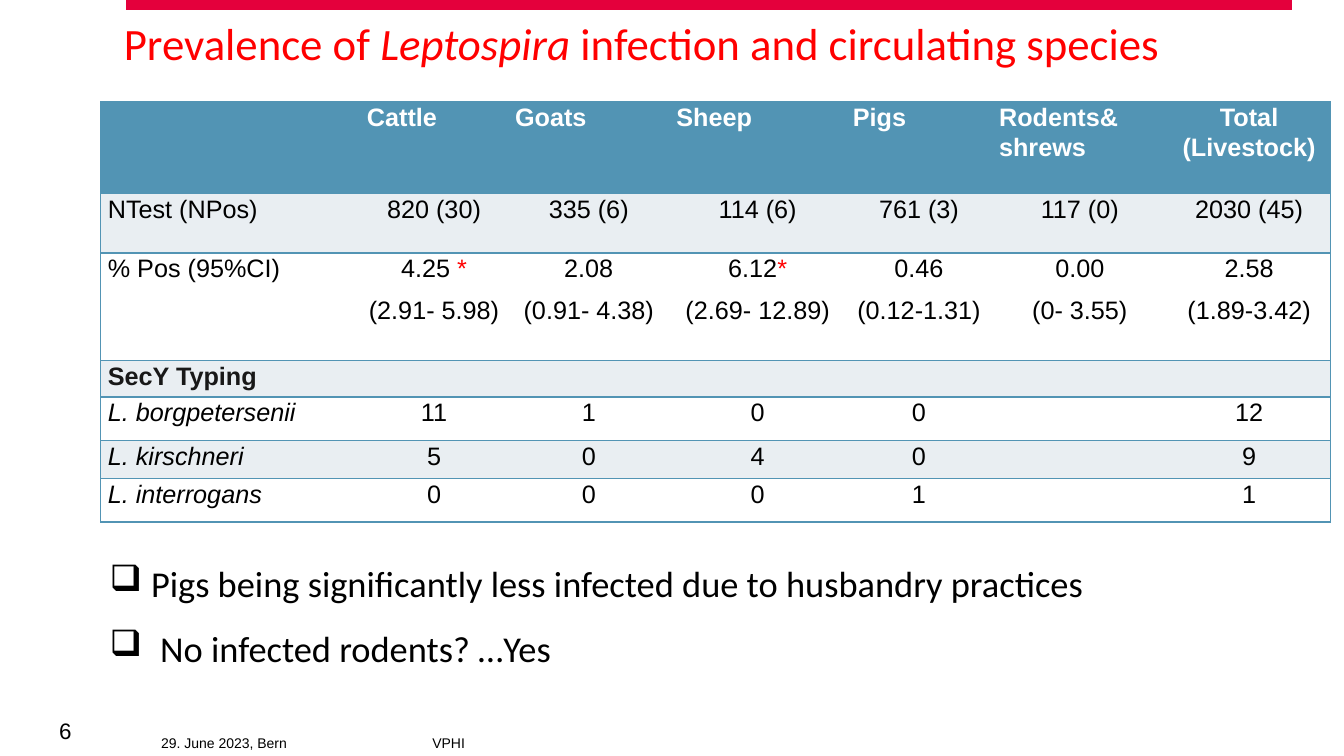
from lxml import etree
from pptx import Presentation
from pptx.dml.color import RGBColor
from pptx.enum.shapes import MSO_CONNECTOR
from pptx.enum.text import MSO_ANCHOR, PP_ALIGN
from pptx.oxml.ns import qn
from pptx.util import Inches, Pt

BLACK = RGBColor(0x00, 0x00, 0x00)
WHITE = RGBColor(0xFF, 0xFF, 0xFF)
RED = RGBColor(0xFF, 0x00, 0x00)
CRIMSON = RGBColor(0xE4, 0x00, 0x3C)
TEAL = RGBColor(0x52, 0x94, 0xB4)
PALE = RGBColor(0xE9, 0xEE, 0xF2)
CHARCOAL = RGBColor(0x18, 0x18, 0x18)

COLUMN_WIDTHS = [2.57, 1.47, 1.6, 1.75, 1.45, 1.74, 1.62]
ROW_HEIGHTS = [0.91, 0.59, 1.07, 0.36, 0.43, 0.38, 0.43]
PREVALENCE = [
    ["", "Cattle", "Goats", "Sheep", "Pigs", "Rodents& shrews", "Total (Livestock)"],
    ["NTest (NPos)", "820 (30)", "335 (6)", "114 (6)", "761 (3)", "117 (0)", "2030 (45)"],
    ["% Pos (95%CI)", "4.25 *\n(2.91- 5.98)", "2.08\n(0.91- 4.38)",
     "6.12*\n(2.69- 12.89)", "0.46\n(0.12-1.31)", "0.00\n(0- 3.55)",
     "2.58\n(1.89-3.42)"],
    ["SecY Typing", "", "", "", "", "", ""],
    ["L. borgpetersenii", "11", "1", "0", "0", "", "12"],
    ["L. kirschneri", "5", "0", "4", "0", "", "9"],
    ["L. interrogans", "0", "0", "0", "1", "", "1"],
]
SECTION_ROW = 3
FINDINGS = [
    ("Pigs being significantly less infected due to husbandry practices", 0.41),
    ("No infected rodents? …Yes", 0.5),
]


class SlideBuilder:
    """Holds the text style and the slide being built."""

    body_face = "Arial"
    display_face = "Calibri"

    def __init__(self, page):
        self.page = page

    def style(self, span, size, face, color, bold=False, italic=False):
        font = span.font
        font.size, font.name = Pt(size), face
        font.bold, font.italic = bold, italic
        font.color.rgb = color

    def rule(self, left, right, top, color, width):
        line = self.page.shapes.add_connector(
            MSO_CONNECTOR.STRAIGHT, Inches(left), Inches(top), Inches(right), Inches(top))
        line.line.color.rgb = color
        line.line.width = Pt(width)
        etree.SubElement(line._element.spPr, qn("a:effectLst"))

    def box(self, left, top, width, height, anchor=MSO_ANCHOR.TOP):
        box = self.page.shapes.add_textbox(
            Inches(left), Inches(top), Inches(width), Inches(height))
        frame = box.text_frame
        frame.word_wrap = True
        frame.vertical_anchor = anchor
        return frame

    def title(self, parts, left, top, width, height):
        frame = self.box(left, top, width, height)
        frame.margin_top = Inches(0.1)
        para = frame.paragraphs[0]
        para.line_spacing = 0.9
        for text, italic in parts:
            span = para.add_run()
            span.text = text
            self.style(span, 32, self.display_face, RED, italic=italic)

    def label(self, text, left, top, width, height, size, align=PP_ALIGN.LEFT, inset=0.1):
        frame = self.box(left, top, width, height, MSO_ANCHOR.MIDDLE)
        frame.margin_left = frame.margin_right = Inches(inset)
        frame.text = text
        para = frame.paragraphs[0]
        para.alignment = align
        self.style(para.runs[0], size, self.body_face, BLACK)

    def bullets(self, items, left, top, width, height):
        frame = self.box(left, top, width, height)
        frame.text = "\n".join(text for text, _ in items)
        for para, (_, indent) in zip(frame.paragraphs, items):
            para.line_spacing = 1.5
            properties = para._p.get_or_add_pPr()
            properties.set("marL", str(Inches(indent)))
            properties.set("indent", str(-Inches(indent)))
            etree.SubElement(properties, qn("a:buChar")).set("char", "❑")
            self.style(para.runs[0], 26, self.display_face, BLACK)

    def borders(self, cell, sides):
        properties = cell._tc.get_or_add_tcPr()
        for position, side in enumerate("LRTB"):
            edge = etree.Element(qn("a:ln" + side), w=str(Pt(1)))
            if side in sides:
                fill = etree.SubElement(edge, qn("a:solidFill"))
                etree.SubElement(fill, qn("a:srgbClr")).set("val", str(TEAL))
            else:
                etree.SubElement(edge, qn("a:noFill"))
            properties.insert(position, edge)

    def cell_text(self, cell, text, align, color, bold, italic):
        cell.text_frame.text = text
        for para, line in zip(cell.text_frame.paragraphs, text.split("\n")):
            para.alignment = align
            para.line_spacing = 1.07
            para.space_after = Pt(8)
            value, star, _ = line.partition("*")
            for span in para.runs:
                span.text = value
                self.style(span, 18, self.body_face, color, bold, italic)
            if star:
                span = para.add_run()
                span.text = star
                self.style(span, 18, self.body_face, RED)

    def table(self, rows, widths, heights, left, top):
        table = self.page.shapes.add_table(
            len(rows), len(widths), Inches(left), Inches(top),
            Inches(sum(widths)), Inches(sum(heights))).table
        table.horz_banding = False
        for column, width in zip(table.columns, widths):
            column.width = Inches(width)
        last = len(widths) - 1
        for r, values in enumerate(rows):
            table.rows[r].height = Inches(heights[r])
            header, section = r == 0, r == SECTION_ROW
            color = WHITE if header else CHARCOAL if section else BLACK
            for c, text in enumerate(values):
                cell = table.cell(r, c)
                cell.margin_left = cell.margin_right = Inches(0.07)
                cell.margin_top = cell.margin_bottom = 0
                cell.fill.solid()
                cell.fill.fore_color.rgb = TEAL if header else PALE if r % 2 else WHITE
                flush = c == 0 or (header and c < last)
                self.cell_text(cell, text, PP_ALIGN.LEFT if flush else PP_ALIGN.CENTER,
                               color, header or section, c == 0 and r > SECTION_ROW)
                self.borders(cell, "TB" + ("L" if c == 0 else "R" if c == last else ""))


def main():
    deck = Presentation()
    deck.slide_width, deck.slide_height = Inches(13.33), Inches(7.5)
    builder = SlideBuilder(deck.slides.add_slide(deck.slide_layouts[6]))
    builder.rule(1.25, 12.81, 0.05, CRIMSON, 7.5)
    builder.title([("Prevalence of ", False), ("Leptospira", True),
                   (" infection and circulating species", False)], 1.13, 0.12, 11.5, 0.82)
    builder.label("29. June 2023, Bern", 1.5, 7.24, 2.47, 0.25, 10)
    builder.label("VPHI", 4.19, 7.24, 8.51, 0.25, 10)
    builder.label("6", 0.34, 7.05, 0.41, 0.4, 16, PP_ALIGN.RIGHT, 0.04)
    builder.table(PREVALENCE, COLUMN_WIDTHS, ROW_HEIGHTS, 1, 1.01)
    builder.bullets(FINDINGS, 0.99, 5.3, 12.04, 1.55)
    deck.save("out.pptx")


if __name__ == "__main__":
    main()
